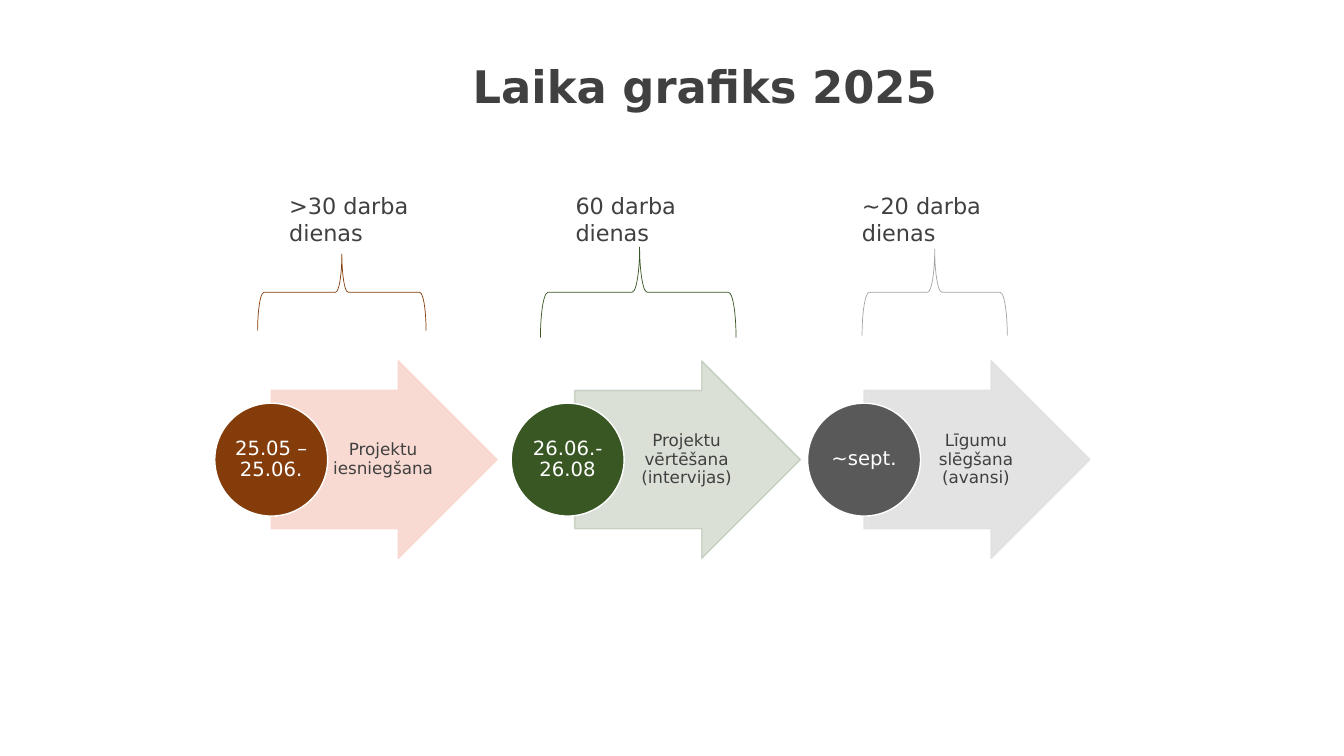
from collections import namedtuple
from dataclasses import dataclass

from lxml.etree import SubElement
from pptx import Presentation
from pptx.dml.color import RGBColor
from pptx.enum.shapes import MSO_SHAPE as Preset
from pptx.enum.text import MSO_ANCHOR as Anchor, PP_ALIGN as Align
from pptx.oxml.ns import qn
from pptx.util import Inches, Pt


@dataclass(frozen=True)
class Theme:
    font: str = "DejaVu Sans"
    ink: str = "404040"
    white: str = "FFFFFF"
    title_size: int = 32
    duration_size: int = 16
    date_size: int = 14
    stage_size: int = 12


THEME = Theme()
WIDTH, HEIGHT = 13.33, 7.5
FIRST_COLUMN, COLUMN = 2.13, 2.94
LABEL_START, LABEL_COLUMN = 2.77, 2.84
LABEL_ROW, BRACE_ROW, ARROW_ROW = 1.86, 2.9, 4.56
CIRCLE, ARROW_WIDTH, ARROW_HEIGHT = 1.12, 2.24, 1.96
NAME_WIDTH, NAME_HEIGHT = 1.09, 1.37

Stage = namedtuple(
    "Stage", "duration dates name dark tint opacity shift brace depth span tip")
STAGES = [
    Stage(">30 darba dienas", "25.05 – 25.06.", "Projektu iesniegšana",
          "843C0B", "F8D7CE", 90, 0, "843C0B", 0.76, 1.67, 0.5),
    Stage("60 darba dienas", "26.06.-26.08", "Projektu vērtēšana (intervijas)",
          "385723", "385723", 18, 0.07, "385723", 0.9, 1.94, 0.493),
    Stage("~20 darba dienas", "~sept.", "Līgumu slēgšana (avansi)",
          "595959", "E1E1E1", 90, 0, "A5A5A5", 0.86, 1.44, 0.5),
]


def paint(fill, color, opacity=100):
    fill.solid()
    fill.fore_color.rgb = RGBColor.from_string(color)
    if opacity < 100:
        color_element = next(fill._xPr.iter(qn("a:srgbClr")))
        SubElement(color_element, qn("a:alpha"), val=str(opacity * 1000))


def write(shape, text, size, color, align=Align.CENTER, anchor=Anchor.MIDDLE,
          insets=(0.1, 0.05, 0.1, 0.05), spacing=0.9, bold=False):
    frame = shape.text_frame
    frame.word_wrap = True
    frame.vertical_anchor = anchor
    (frame.margin_left, frame.margin_top,
     frame.margin_right, frame.margin_bottom) = map(Inches, insets)
    paragraph = frame.paragraphs[0]
    paragraph.text = text
    paragraph.alignment = align
    paragraph.line_spacing = spacing
    paragraph.font.name = THEME.font
    paragraph.font.size = Pt(size)
    paragraph.font.bold = bold
    paragraph.font.color.rgb = RGBColor.from_string(color)


def add_preset(slide, preset, left, top, width, height, line, weight, opacity=100):
    shape = slide.shapes.add_shape(preset, *map(Inches, (left, top, width, height)))
    shape.shadow.inherit = False
    shape.line.width = Pt(weight)
    paint(shape.line.fill, line, opacity)
    return shape


def add_label(slide, left, top, width, height, text, size, **style):
    box = slide.shapes.add_textbox(*map(Inches, (left, top, width, height)))
    write(box, text, size, THEME.ink, **style)


def add_arrow(slide, left, stage):
    arrow = add_preset(slide, Preset.RIGHT_ARROW, left, ARROW_ROW - ARROW_HEIGHT / 2,
                       ARROW_WIDTH, ARROW_HEIGHT, stage.tint, 1, stage.opacity)
    arrow.adjustments[0] = 0.7
    paint(arrow.fill, stage.tint, stage.opacity)
    add_label(slide, left + ARROW_WIDTH / 4, ARROW_ROW - NAME_HEIGHT / 2,
              NAME_WIDTH, NAME_HEIGHT, stage.name, THEME.stage_size,
              insets=(0.03, 0.01, 0.02, 0.01))


def add_circle(slide, left, stage):
    circle = add_preset(slide, Preset.OVAL, left, ARROW_ROW - CIRCLE / 2,
                        CIRCLE, CIRCLE, THEME.white, 1)
    paint(circle.fill, stage.dark)
    write(circle, stage.dates, THEME.date_size, THEME.white, insets=(0.01,) * 4)


def add_brace(slide, center, stage):
    brace = add_preset(slide, Preset.LEFT_BRACE, center - stage.depth / 2,
                       BRACE_ROW - stage.span / 2, stage.depth, stage.span,
                       stage.brace, 0.5)
    brace.fill.background()
    brace.rotation = 90
    brace.adjustments[1] = stage.tip


def main():
    presentation = Presentation()
    presentation.slide_width, presentation.slide_height = Inches(WIDTH), Inches(HEIGHT)
    slide = presentation.slides.add_slide(presentation.slide_layouts[6])

    add_label(slide, 2.55, 0.59, WIDTH * 2 / 3, 1.17, "Laika grafiks 2025",
              THEME.title_size, anchor=Anchor.TOP, bold=True)
    for index, stage in enumerate(STAGES):
        left = FIRST_COLUMN + index * COLUMN
        add_arrow(slide, left + CIRCLE / 2 + stage.shift, stage)
        add_circle(slide, left, stage)
        add_brace(slide, left + 1.26, stage)
        add_label(slide, LABEL_START + index * LABEL_COLUMN, LABEL_ROW, 1.94, 0.64,
                  stage.duration, THEME.duration_size, align=Align.LEFT,
                  anchor=Anchor.TOP, spacing=1.0)
    presentation.save("out.pptx")


if __name__ == "__main__":
    main()
